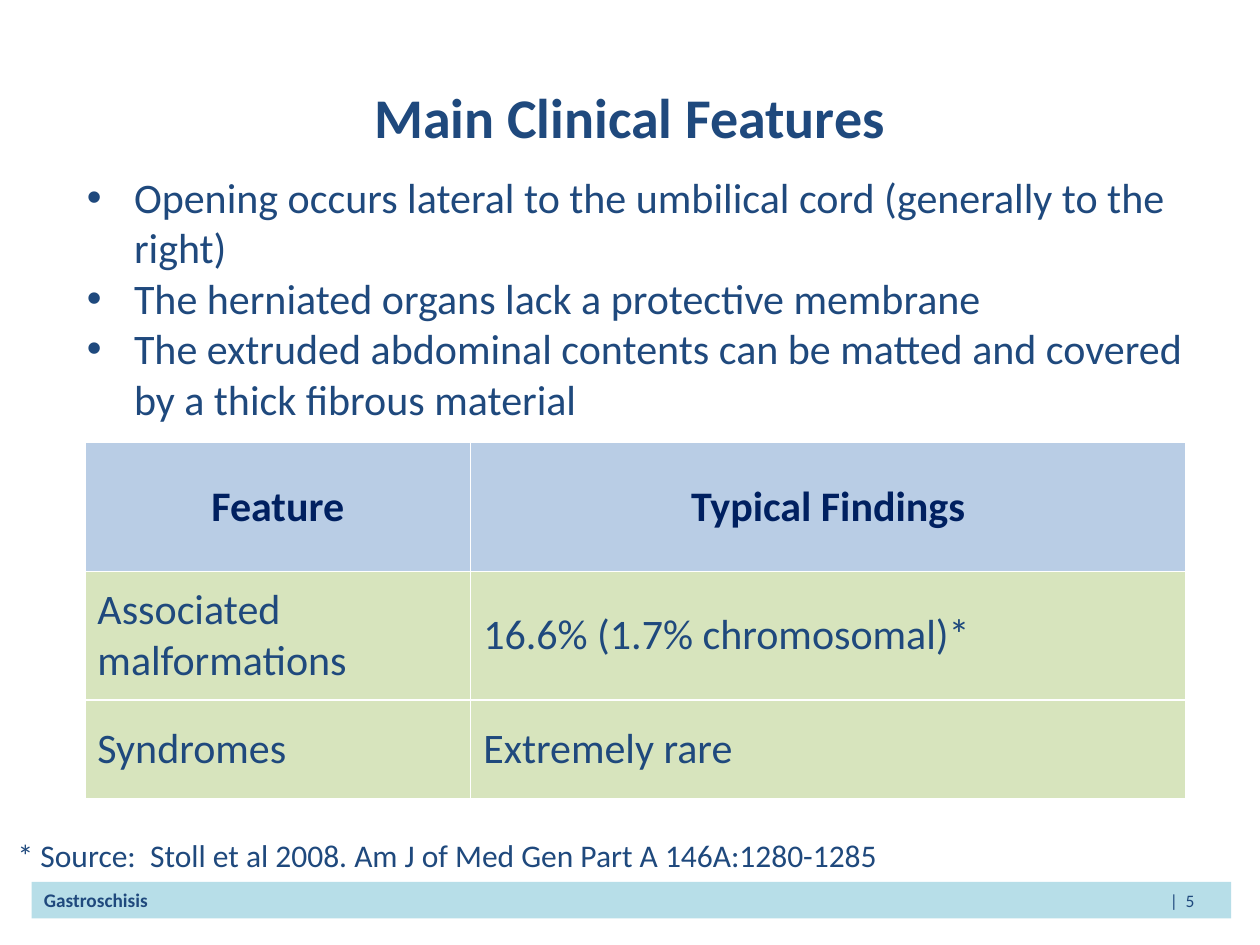
from lxml.etree import SubElement
from pptx import Presentation
from pptx.dml.color import RGBColor
from pptx.enum.shapes import MSO_SHAPE
from pptx.enum.text import MSO_ANCHOR as Anchor, MSO_AUTO_SIZE as AutoSize, PP_ALIGN as Align
from pptx.oxml.ns import qn
from pptx.util import Pt

BLUE = RGBColor(0x1F, 0x49, 0x7D)
NAVY = RGBColor(0x00, 0x20, 0x60)
HEADER_FILL = RGBColor(0xB9, 0xCD, 0xE5)
BODY_FILL = RGBColor(0xD7, 0xE4, 0xBD)
FOOTER_FILL = RGBColor(0xB7, 0xDE, 0xE8)

FEATURES = [
    "Opening occurs lateral to the umbilical cord (generally to the right)",
    "The herniated organs lack a protective membrane",
    "The extruded abdominal contents can be matted and covered by a thick fibrous material",
]
FINDINGS = [
    ("Feature", "Typical Findings"),
    ("Associated malformations", "16.6% (1.7% chromosomal)*"),
    ("Syndromes", "Extremely rare"),
]


def style(paragraph, size, color=BLUE, bold=False, align=Align.LEFT):
    paragraph.alignment = align
    for run in paragraph.runs:
        run.font.name = "Calibri"
        run.font.size = Pt(size)
        run.font.bold = bold
        run.font.color.rgb = color


def add_bullet(paragraph, indent):
    props = paragraph._p.get_or_add_pPr()
    props.set("marL", str(Pt(indent)))
    props.set("indent", str(-Pt(indent)))
    bullet_color = SubElement(props, qn("a:buClr"))
    SubElement(bullet_color, qn("a:srgbClr"), val=str(BLUE))
    SubElement(props, qn("a:buFont"), typeface="Arial")
    SubElement(props, qn("a:buChar"), char="•")


def place_title(slide, left, top, width, height):
    title = slide.shapes.title
    title.left, title.top, title.width, title.height = map(Pt, (left, top, width, height))
    title.text_frame.text = "Main Clinical Features"
    title.text_frame.vertical_anchor = Anchor.MIDDLE
    style(title.text_frame.paragraphs[0], 32, bold=True, align=Align.CENTER)


def add_text(slide, lines, size, left, top, width, height):
    frame = slide.shapes.add_textbox(*map(Pt, (left, top, width, height))).text_frame
    frame.word_wrap = True
    frame.auto_size = AutoSize.SHAPE_TO_FIT_TEXT
    frame.text = "\n".join(lines)
    for paragraph in frame.paragraphs:
        style(paragraph, size)
    return frame


def add_features(slide, left, top, width, height):
    for paragraph in add_text(slide, FEATURES, 24, left, top, width, height).paragraphs:
        add_bullet(paragraph, 27)


def add_findings(slide, left, top, column_widths, row_heights):
    box = map(Pt, (left, top, sum(column_widths), sum(row_heights)))
    table = slide.shapes.add_table(len(row_heights), len(column_widths), *box).table
    for column, width in zip(table.columns, column_widths):
        column.width = Pt(width)
    for index, (row, height, texts) in enumerate(zip(table.rows, row_heights, FINDINGS)):
        row.height = Pt(height)
        header = index == 0
        for cell, text in zip(row.cells, texts):
            cell.text_frame.text = text
            cell.vertical_anchor = Anchor.MIDDLE
            cell.fill.solid()
            cell.fill.fore_color.rgb = HEADER_FILL if header else BODY_FILL
            style(cell.text_frame.paragraphs[0], 24, NAVY if header else BLUE, header,
                  Align.CENTER if header else Align.LEFT)


def add_footer(slide, left, top, width, height):
    bar = slide.shapes.add_shape(MSO_SHAPE.RECTANGLE, *map(Pt, (left, top, width, height)))
    bar.shadow.inherit = False
    bar.fill.solid()
    bar.fill.fore_color.rgb = FOOTER_FILL
    bar.line.fill.background()
    bar.text_frame.word_wrap = True
    label = bar.text_frame.paragraphs[0]
    label.text = "Gastroschisis"
    style(label, 11, bold=True)
    page = label.add_run()
    page.text = "\t|  5"
    page.font.name = "Calibri"
    page.font.size = Pt(10)
    page.font.bold = False
    page.font.color.rgb = BLUE
    tabs = SubElement(label._p.get_or_add_pPr(), qn("a:tabLst"))
    SubElement(tabs, qn("a:tab"), pos=str(Pt(width - 28)), algn="r")


def main():
    deck = Presentation()
    deck.slide_width, deck.slide_height = Pt(720), Pt(540)
    slide = deck.slides.add_slide(deck.slide_layouts[5])
    place_title(slide, 36, 21.6, 648, 90)
    add_findings(slide, 48.5, 253, (220.5, 408.5), (73.5, 73.5, 56.5))
    add_footer(slide, 18, 504, 685.5, 20.8)
    add_features(slide, 42.5, 94.5, 658, 152.5)
    add_text(slide, ["* Source:  Stoll et al 2008. Am J of Med Gen Part A 146A:1280-1285"],
             18, 3, 474, 544.5, 29)
    deck.save("out.pptx")


if __name__ == "__main__":
    main()
